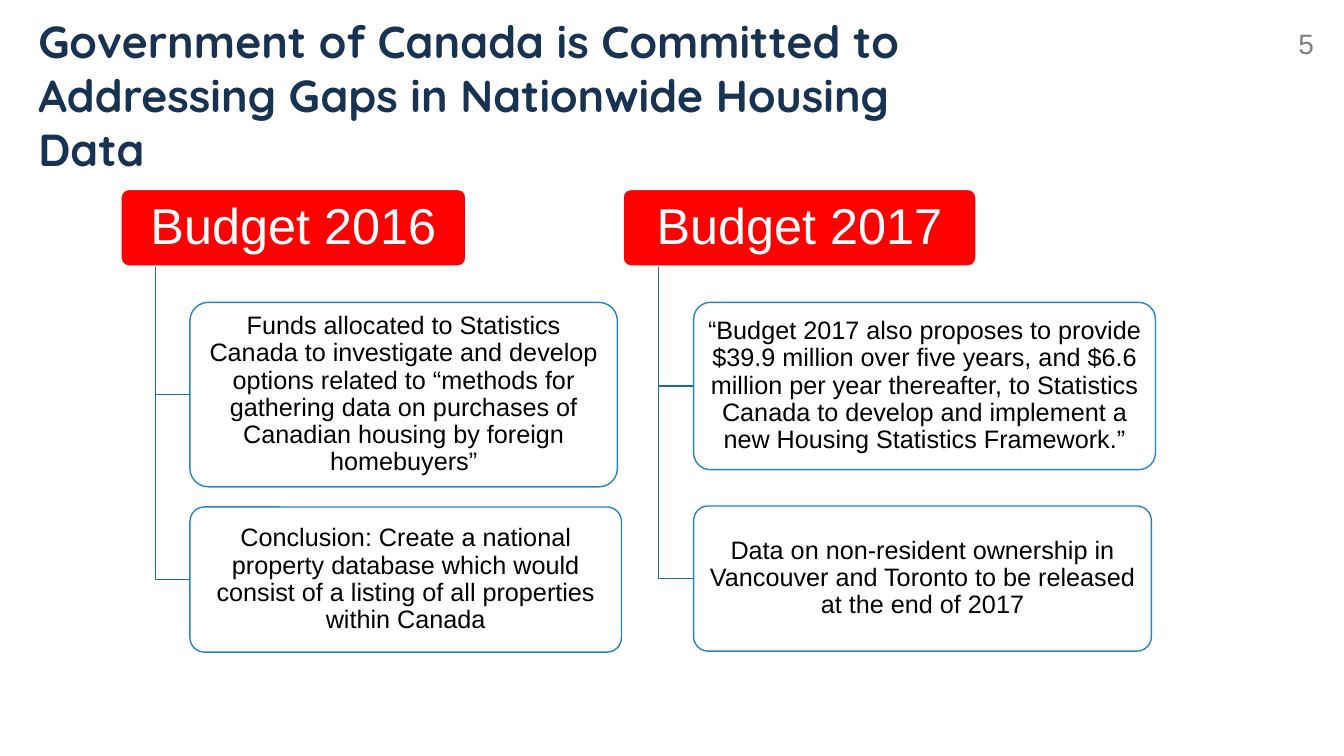
from pptx import Presentation
from pptx.dml.color import RGBColor
from pptx.enum.shapes import MSO_SHAPE as SHAPE
from pptx.enum.text import MSO_ANCHOR as ANCHOR, MSO_AUTO_SIZE as AUTO_SIZE, PP_ALIGN as ALIGN
from pptx.util import Inches, Pt


def color(value):
    return RGBColor.from_string(value)


def write(box, text, size, ink, align, **formats):
    frame = box.text_frame
    frame.word_wrap = True
    frame.auto_size = AUTO_SIZE.NONE
    para = frame.paragraphs[0]
    para.alignment = align
    span = para.add_run()
    span.text = text
    for name, value in {"name": "Arial", "size": Pt(size), **formats}.items():
        setattr(span.font, name, value)
    span.font.color.rgb = color(ink)
    return para


deck = Presentation()
deck.slide_width, deck.slide_height = Inches(13.33), Inches(7.5)
page = deck.slides.add_slide(deck.slide_layouts[5])

# Title
title = page.shapes.title
title.left, title.top = Inches(0.28), Inches(0.09)
title.width, title.height = Inches(9.69), Inches(2.53)
title.text_frame.vertical_anchor = ANCHOR.TOP
write(title, "Government of Canada is Committed to Addressing Gaps in Nationwide Housing Data",
      32, "183351", ALIGN.LEFT, name="Quicksand", bold=True)

# Budgets: heading, left, width, then details as (top, width, height, text)
budgets = [
    ("Budget 2016", 1.2, 3.42, [
        (3, 4.24, 1.83, "Funds allocated to Statistics Canada to investigate and develop options "
         "related to “methods for gathering data on purchases of Canadian housing by foreign "
         "homebuyers”"),
        (5.03, 4.28, 1.44, "Conclusion: Create a national property database which would consist "
         "of a listing of all properties within Canada"),
    ]),
    ("Budget 2017", 6.18, 3.5, [
        (3, 4.58, 1.66, "“Budget 2017 also proposes to provide $39.9 million over five years, and "
         "$6.6 million per year thereafter, to Statistics Canada to develop and implement a new "
         "Housing Statistics Framework.”"),
        (5.02, 4.54, 1.44, "Data on non-resident ownership in Vancouver and Toronto to be "
         "released at the end of 2017"),
    ]),
]
HEADING_TOP, HEADING_HEIGHT = 1.88, 0.76
heading_bottom = HEADING_TOP + HEADING_HEIGHT

for heading, left, width, details in budgets:
    stem = left + width / 10
    detail_left = left + width / 5
    cards = [(left, HEADING_TOP, width, HEADING_HEIGHT, heading, 36, "FF0000", "FFFFFF", "FFFFFF")]

    # Elbow lines from the heading to each detail
    for top, detail_width, height, text in details:
        middle = top + height / 2
        builder = page.shapes.build_freeform(Inches(stem), Inches(heading_bottom))
        builder.add_line_segments([(Inches(stem), Inches(middle)),
                                   (Inches(detail_left), Inches(middle))], close=False)
        elbow = builder.convert_to_shape()
        elbow.shadow.inherit = False
        elbow.fill.background()
        elbow.line.color.rgb = color("1E699F")
        elbow.line.width = Pt(1)
        cards.append((detail_left, top, detail_width, height, text, 18,
                      "FFFFFF", "2683C6", "000000"))

    # Heading and detail boxes
    for x, y, card_width, height, text, size, fill, border, ink in cards:
        card = page.shapes.add_shape(SHAPE.ROUNDED_RECTANGLE, Inches(x), Inches(y),
                                     Inches(card_width), Inches(height))
        card.adjustments[0] = 0.1
        card.shadow.inherit = False
        card.fill.solid()
        card.fill.fore_color.rgb = color(fill)
        card.line.color.rgb = color(border)
        card.line.width = Pt(1)
        margins = {"margin_left": 0.09, "margin_right": 0.09,
                   "margin_top": 0.07, "margin_bottom": 0.07}
        for name, value in margins.items():
            setattr(card.text_frame, name, Inches(value))
        card.text_frame.vertical_anchor = ANCHOR.MIDDLE
        write(card, text, size, ink, ALIGN.CENTER).line_spacing = 0.9

# Page number
number = page.shapes.add_textbox(Inches(10.13), Inches(0.21), Inches(3), Inches(0.4))
write(number, "5", 20, "808080", ALIGN.RIGHT)

deck.save("out.pptx")
